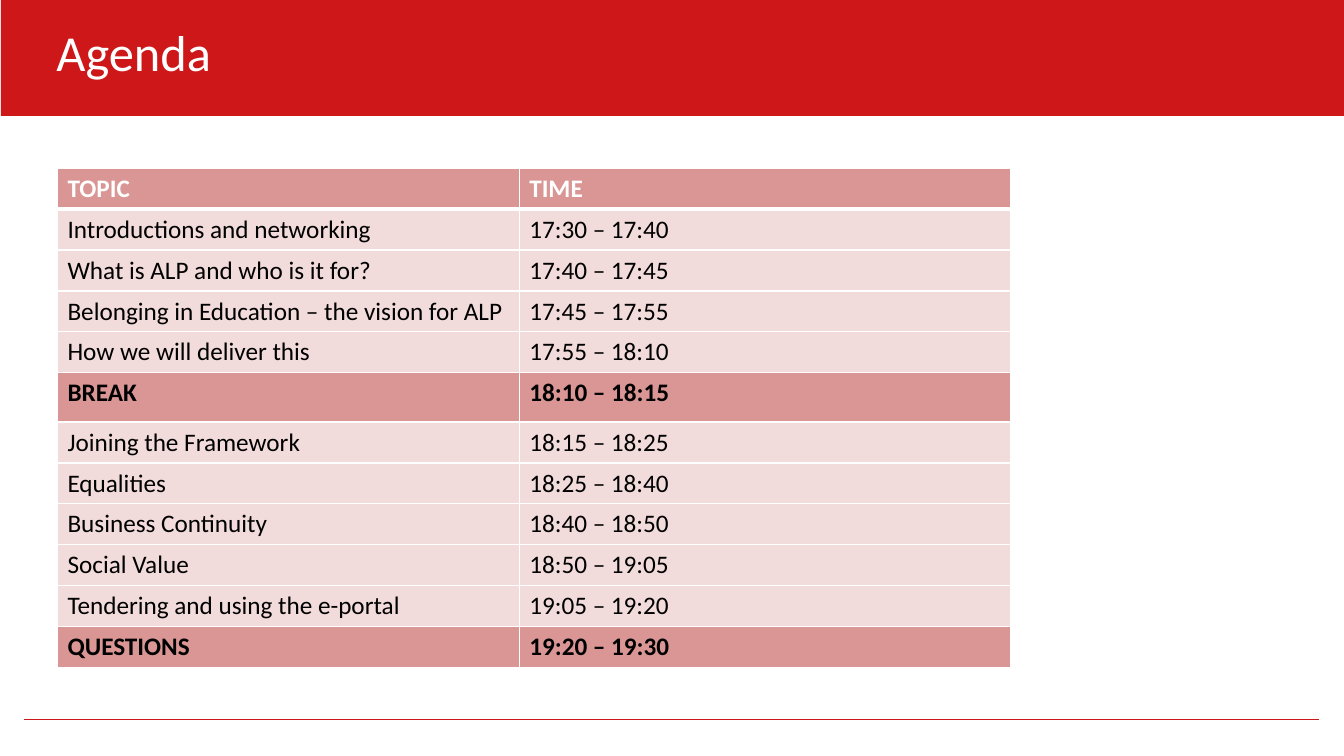
from dataclasses import dataclass

from lxml import etree
from pptx import Presentation
from pptx.dml.color import RGBColor
from pptx.enum import shapes, text
from pptx.oxml.ns import qn
from pptx.util import Inches, Pt

TITLE = "Agenda"
HEADER = ("TOPIC", "TIME")
SESSIONS = [
    ("Introductions and networking", "17:30 – 17:40"),
    ("What is ALP and who is it for?", "17:40 – 17:45"),
    ("Belonging in Education – the vision for ALP", "17:45 – 17:55"),
    ("How we will deliver this", "17:55 – 18:10"),
    ("BREAK", "18:10 – 18:15"),
    ("Joining the Framework", "18:15 – 18:25"),
    ("Equalities", "18:25 – 18:40"),
    ("Business Continuity", "18:40 – 18:50"),
    ("Social Value", "18:50 – 19:05"),
    ("Tendering and using the e-portal", "19:05 – 19:20"),
    ("QUESTIONS", "19:20 – 19:30"),
]
HIGHLIGHTS = {"TOPIC", "BREAK", "QUESTIONS"}
COLUMN_WIDTHS = (4.58, 4.87)
ROW_HEIGHT, BREAK_HEIGHT = 0.4, 0.49


@dataclass(frozen=True)
class Theme:
    font: str = "Calibri"
    title_size: int = 36
    body_size: int = 18
    banner: str = "CD1719"
    rule: str = "CB1719"
    strong: str = "D99694"
    pale: str = "F2DCDB"
    white: str = "FFFFFF"
    black: str = "000000"


THEME = Theme()


def write(frame, words, size=THEME.body_size, color=THEME.black, bold=False):
    paragraph = frame.paragraphs[0]
    paragraph.alignment = text.PP_ALIGN.LEFT
    run = paragraph.add_run()
    run.text = words
    run.font.name = THEME.font
    run.font.size = Pt(size)
    run.font.bold = bold
    run.font.color.rgb = RGBColor.from_string(color)


def paint(fill, color):
    fill.solid()
    fill.fore_color.rgb = RGBColor.from_string(color)


def set_borders(cell, **widths):
    properties = cell._tc.get_or_add_tcPr()
    for position, (side, width) in enumerate(widths.items()):
        border = etree.Element(qn(f"a:ln{side}"), w=str(Pt(width)))
        solid = etree.SubElement(border, qn("a:solidFill"))
        etree.SubElement(solid, qn("a:srgbClr"), val=THEME.white)
        properties.insert(position, border)


def add_banner(slide):
    banner = slide.shapes.add_shape(
        shapes.MSO_SHAPE.RECTANGLE, Inches(0.01), 0, Inches(13.33), Inches(1.15))
    banner.shadow.inherit = False
    paint(banner.fill, THEME.banner)
    banner.line.fill.background()
    # Place the banner behind the title
    slide.shapes._spTree.insert(2, banner._element)


def add_footer_rule(slide):
    rule = slide.shapes.add_connector(
        shapes.MSO_CONNECTOR.STRAIGHT,
        Inches(0.24), Inches(7.13), Inches(13.08), Inches(7.13))
    rule.line.color.rgb = RGBColor.from_string(THEME.rule)
    rule.line.width = Pt(0.25)
    etree.SubElement(rule._element.spPr, qn("a:effectLst"))


def add_title(slide):
    title = slide.shapes.title
    title.left, title.top = Inches(0.46), Inches(0.18)
    title.width, title.height = Inches(12.42), Inches(0.66)
    title.text_frame.vertical_anchor = text.MSO_ANCHOR.MIDDLE
    write(title.text_frame, TITLE, size=THEME.title_size, color=THEME.white)


def add_agenda(slide):
    rows = [HEADER, *SESSIONS]
    heights = [BREAK_HEIGHT if topic == "BREAK" else ROW_HEIGHT for topic, _ in rows]
    agenda = slide.shapes.add_table(
        len(rows), len(HEADER), Inches(0.57), Inches(1.67),
        Inches(sum(COLUMN_WIDTHS)), Inches(sum(heights))).table
    for column, width in zip(agenda.columns, COLUMN_WIDTHS):
        column.width = Inches(width)
    for r, entry in enumerate(rows):
        agenda.rows[r].height = Inches(heights[r])
        strong = entry[0] in HIGHLIGHTS
        for c, words in enumerate(entry):
            cell = agenda.cell(r, c)
            paint(cell.fill, THEME.strong if strong else THEME.pale)
            write(cell.text_frame, words, bold=strong,
                  color=THEME.white if r == 0 else THEME.black)
            # The header is set off by a heavier line
            set_borders(cell, L=1, R=1, T=3 if r == 1 else 1, B=3 if r == 0 else 1)


def main():
    deck = Presentation()
    deck.slide_width, deck.slide_height = Inches(13.33), Inches(7.5)
    slide = deck.slides.add_slide(deck.slide_layouts[5])
    add_banner(slide)
    add_footer_rule(slide)
    add_title(slide)
    add_agenda(slide)
    deck.save("out.pptx")


if __name__ == "__main__":
    main()
